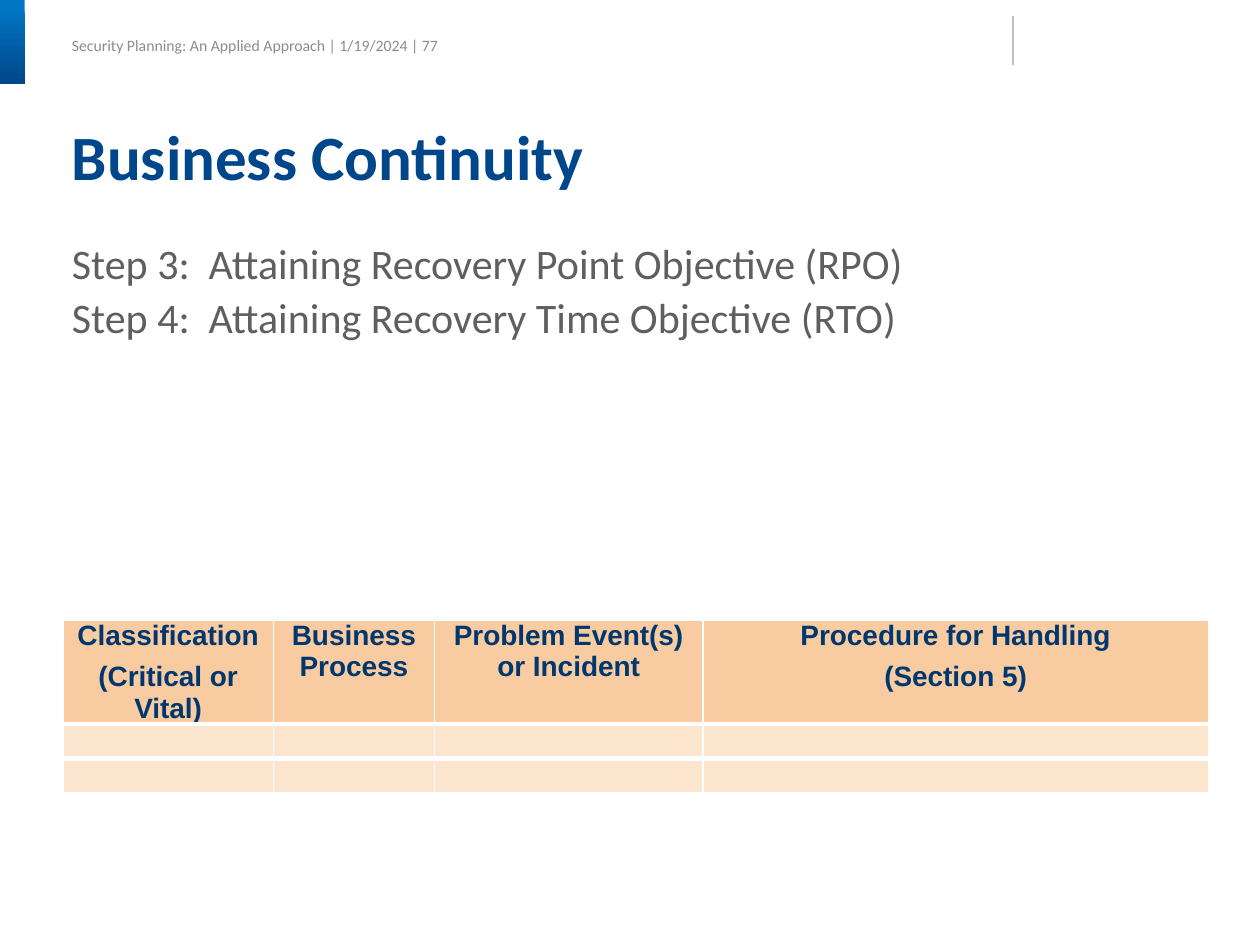
"""Build the Business Continuity slide with its recovery procedure table."""
from lxml.etree import SubElement
from pptx import Presentation
from pptx.dml.color import RGBColor
from pptx.enum.shapes import MSO_CONNECTOR as CONN, MSO_SHAPE as SHAPE
from pptx.enum.text import MSO_ANCHOR as ANCHOR, MSO_AUTO_SIZE as AUTO, PP_ALIGN as ALIGN
from pptx.oxml.ns import qn
from pptx.util import Cm, Pt

COLORS = {
    "title": "00468A", "body": "5F5F5F", "footer": "8C8C8C", "rule": "BFBFBF",
    "bar_top": "0176C3", "bar_bottom": "00468A", "border": "FFFFFF",
    "head_text": "00376F", "head_fill": "F8CBA0", "row_fill": "FCE5CF",
}
LEFT, WIDTH = 1.45, 22.66
STEPS = ["Step 3:  Attaining Recovery Point Objective (RPO)",
         "Step 4:  Attaining Recovery Time Objective (RTO)"]
HEADERS = [["Classification", "(Critical or Vital)"], ["Business Process"],
           ["Problem Event(s) or Incident"], ["Procedure for Handling", "(Section 5)"]]
COL_WIDTHS = [4.24, 3.25, 5.41, 10.19]
ROW_HEIGHTS = [1.57, 0.69, 0.69]


def rgb(name):
    return RGBColor.from_string(COLORS[name])


def style(p, size, color, font="Calibri", bold=False):
    for r in p.runs:
        r.font.name, r.font.size, r.font.bold = font, Pt(size), bold
        r.font.color.rgb = rgb(color)


def place(sp, left, top, width, height):
    sp.left, sp.top, sp.width, sp.height = Cm(left), Cm(top), Cm(width), Cm(height)


def prepare_frame(tf, anchor=ANCHOR.TOP, wrap=True):
    tf.margin_left = tf.margin_right = tf.margin_top = tf.margin_bottom = 0
    tf.vertical_anchor, tf.word_wrap, tf.auto_size = anchor, wrap, AUTO.NONE


def add_header_band(s):
    bar = s.shapes.add_shape(SHAPE.RECTANGLE, 0, 0, Cm(0.5), Cm(1.7))
    bar.shadow.inherit = False
    bar.line.fill.background()
    bar.fill.gradient()
    bar.fill.gradient_angle = 270
    stops = zip(bar.fill.gradient_stops, ("bar_top", "bar_bottom"), (0.1, 1))
    for stop, color, position in stops:
        stop.color.rgb, stop.position = rgb(color), position

    rule = s.shapes.add_connector(CONN.STRAIGHT, Cm(20.42), Cm(0.33), Cm(20.42), Cm(1.32))
    rule.line.color.rgb, rule.line.width = rgb("rule"), Pt(0.75)
    SubElement(rule._element.spPr, qn("a:effectLst"))

    tf = s.shapes.add_textbox(Cm(LEFT), Cm(0.63), Cm(7.45), Cm(0.56)).text_frame
    prepare_frame(tf, ANCHOR.MIDDLE, wrap=False)
    tf.text = "Security Planning: An Applied Approach | 1/19/2024 | 77"
    style(tf.paragraphs[0], 9, "footer")


def fill_title(sp, text):
    place(sp, LEFT, 2.54, WIDTH, 1.4)
    prepare_frame(sp.text_frame)
    sp.text_frame.text = text
    p = sp.text_frame.paragraphs[0]
    p.alignment, p.line_spacing = ALIGN.LEFT, 0.9
    style(p, 36, "title", bold=True)


def fill_body(sp, lines):
    place(sp, LEFT, 5.03, WIDTH, 12.67)
    tf = sp.text_frame
    prepare_frame(tf)
    tf.text = "\n".join(lines)
    for i, p in enumerate(tf.paragraphs):
        pPr = p._p.get_or_add_pPr()
        pPr.set("marL", "0")
        pPr.set("indent", "0")
        SubElement(pPr, qn("a:buNone"))
        p.line_spacing, p.space_before = Pt(22), Pt(9 if i else 0)
        style(p, 24, "body")


def set_borders(cell, top, bottom):
    tcPr = cell._tc.get_or_add_tcPr()
    for side, width in (("L", 1), ("R", 1), ("T", top), ("B", bottom)):
        ln = SubElement(tcPr, qn(f"a:ln{side}"), w=str(Pt(width)))
        fill = SubElement(ln, qn("a:solidFill"))
        SubElement(fill, qn("a:srgbClr"), val=COLORS["border"])


def fill_cell(cell, lines, fill, top, bottom):
    set_borders(cell, top, bottom)
    cell.fill.solid()
    cell.fill.fore_color.rgb = rgb(fill)
    cell.margin_left = cell.margin_right = Cm(0.18)
    cell.margin_top = cell.margin_bottom = 0
    if not lines:
        SubElement(cell.text_frame.paragraphs[0]._p, qn("a:endParaRPr"), sz="1600")
        return
    cell.text_frame.text = "\n".join(lines)
    for p in cell.text_frame.paragraphs:
        p.alignment, p.space_after = ALIGN.CENTER, Pt(6)
        style(p, 16, "head_text", "Arial", bold=True)


def add_procedure_table(s):
    rows, cols = len(ROW_HEIGHTS), len(COL_WIDTHS)
    table = s.shapes.add_table(rows, cols, Cm(1.27), Cm(12.5),
                               Cm(sum(COL_WIDTHS)), Cm(sum(ROW_HEIGHTS))).table
    for col, width in zip(table.columns, COL_WIDTHS):
        col.width = Cm(width)
    for i, height in enumerate(ROW_HEIGHTS):
        table.rows[i].height = Cm(height)
        for j, header in enumerate(HEADERS):
            fill_cell(table.cell(i, j), [] if i else header,
                      "row_fill" if i else "head_fill",
                      3 if i else 1, 3 if i < rows - 1 else 1)


def main():
    prs = Presentation()
    prs.slide_width, prs.slide_height = Cm(25.4), Cm(19.05)
    s = prs.slides.add_slide(prs.slide_layouts[1])
    add_header_band(s)
    fill_title(s.shapes.title, "Business Continuity")
    fill_body(s.placeholders[1], STEPS)
    add_procedure_table(s)
    prs.save("out.pptx")


if __name__ == "__main__":
    main()
